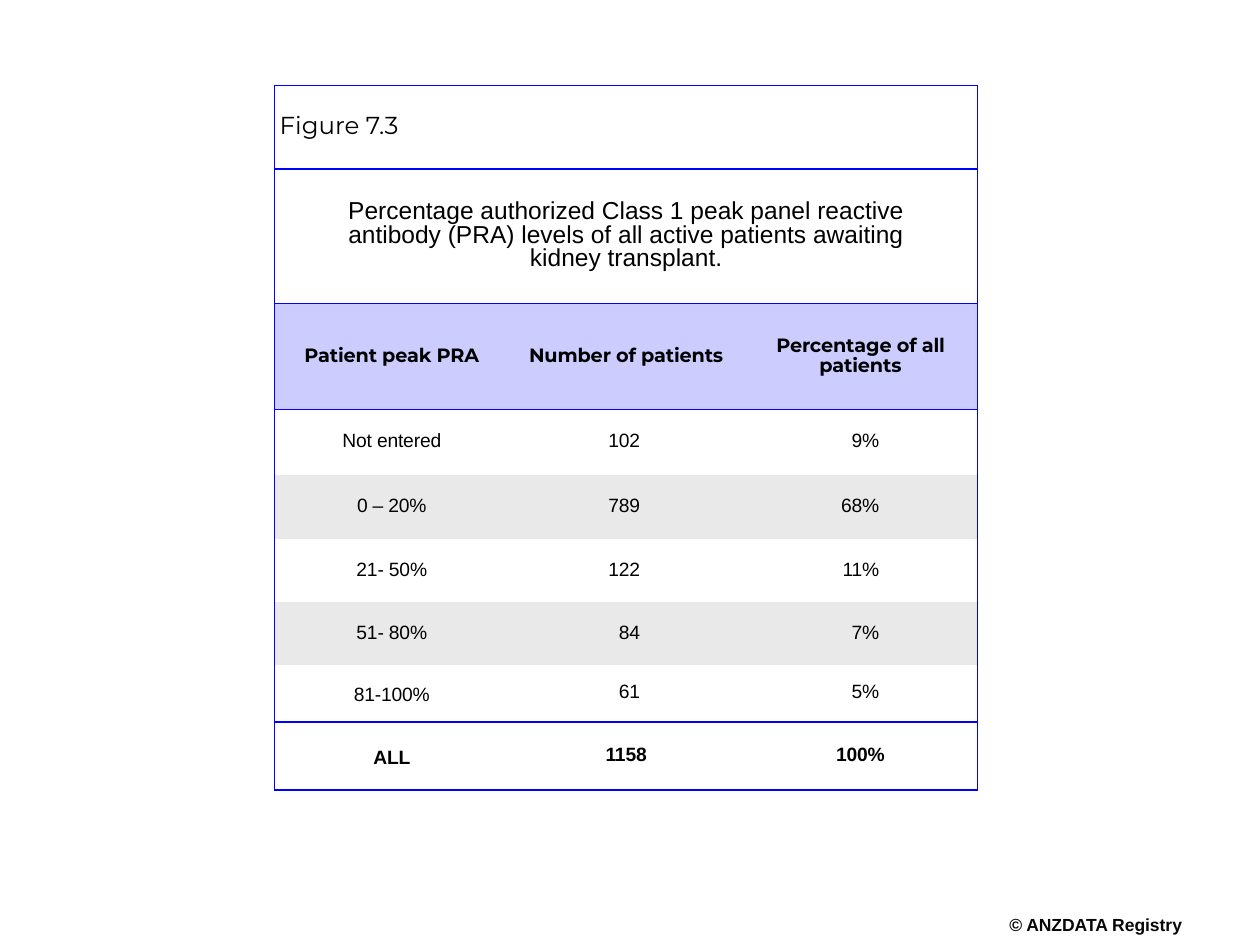
from lxml import etree
from pptx import Presentation, util as u
from pptx.dml.color import RGBColor
from pptx.enum import text as t
from pptx.oxml.ns import qn

THEME = dict(
    ink="000000", mark="080808", line="0000FF", head="CCCCFF", band="E9E9E9", page="FFFFFF",
    title=14, body=11, note=10, sans="Arial", show="Montserrat",
)
NOTE = "© ANZDATA Registry"
TITLES = [
    "Figure 7.3",
    "Percentage authorized Class 1 peak panel reactive antibody (PRA) "
    "levels of all active patients awaiting kidney transplant.",
]
HEAD = ["Patient peak PRA", "Number of patients", "Percentage of all patients"]
BODY = [
    ["Not entered", "102", "9%"],
    ["0 – 20%", "789", "68%"],
    ["21- 50%", "122", "11%"],
    ["51- 80%", "84", "7%"],
    ["81-100%", "61", "5%"],
]
TOTAL = ["ALL", "1158", "100%"]

LEFT, TOP, COL = 2.18, 0.68, 1.86
ROWS = [0.66, 1.07, 0.84, 0.52, 0.51, 0.5, 0.5, 0.45, 0.54]
GRID = [[line, "", ""] for line in TITLES] + [HEAD] + BODY + [TOTAL]
LAST = len(GRID) - 1
HEADROW = len(TITLES)
RULED = {-1, 0, 1, HEADROW, LAST - 1, LAST}  # rows with a line below; -1 is the top edge
PAD = 0.04
INSET = {1: 0.82, 2: 0.78}  # right margins that line up the digits


def rgb(name):
    return RGBColor.from_string(THEME[name])


def style(par, size, face="sans", bold=False, ink="ink", lead=0.85):
    par.line_spacing = lead
    for run in par.runs:
        font = run.font
        font.size, font.name, font.bold = u.Pt(THEME[size]), THEME[face], bold
        font.color.rgb = rgb(ink)


def edge(cell, side, width):
    """Draw one cell border; a width of 0 hides it."""
    line = etree.SubElement(cell._tc.get_or_add_tcPr(), qn("a:ln" + side), w=str(u.Pt(width)))
    if width:
        fill = etree.SubElement(line, qn("a:solidFill"))
        etree.SubElement(fill, qn("a:srgbClr"), val=THEME["line"])
    else:
        etree.SubElement(line, qn("a:noFill"))


def frame(cell, row, col):
    wide = row < HEADROW
    right = 0.5 if row == HEADROW else 1
    edge(cell, "L", int(wide or col == 0))
    edge(cell, "R", right if wide or col == 2 else 0)
    edge(cell, "T", int(row - 1 in RULED))
    edge(cell, "B", int(row in RULED))


def paint(cell, row):
    if row <= HEADROW:
        name = "head" if row == HEADROW else "page"
    else:
        name = "band" if row < LAST and (row - HEADROW) % 2 == 0 else None
    if name:
        cell.fill.solid()
        cell.fill.fore_color.rgb = rgb(name)
    else:
        cell.fill.background()


def write(cell, row, col, words):
    side, tall = (0.39, 0.02) if row == 1 else (PAD, PAD)
    cell.margin_left = cell.margin_right = u.Inches(side)
    cell.margin_top = cell.margin_bottom = u.Inches(tall)
    cell.vertical_anchor = t.MSO_ANCHOR.MIDDLE
    cell.text_frame.text = words
    par = cell.text_frame.paragraphs[0]
    par.alignment = t.PP_ALIGN.LEFT if row == 0 else t.PP_ALIGN.CENTER
    if HEADROW < row < LAST and col:
        par.alignment = t.PP_ALIGN.RIGHT
        cell.margin_right = u.Inches(INSET[col])
    style(
        par,
        "title" if row < HEADROW else "body",
        face="show" if row in (0, HEADROW) else "sans",
        bold=row in (HEADROW, LAST),
        lead=1.14 if row >= LAST - 1 and col == 0 else 0.85,
    )
    if row >= HEADROW:
        for run in par.runs:
            run._r.get_or_add_rPr().set("spc", "-10")


def build():
    deck = Presentation()
    deck.slide_width, deck.slide_height = u.Inches(10), u.Inches(7.5)
    slide = deck.slides.add_slide(deck.slide_layouts[6])

    box = slide.shapes.add_textbox(*map(u.Inches, (7.99, 7.28, 1.41, 0.17)))
    tf = box.text_frame
    tf.margin_left = tf.margin_right = tf.margin_top = tf.margin_bottom = 0
    tf.word_wrap = False
    tf.text = NOTE
    tf.paragraphs[0].alignment = t.PP_ALIGN.CENTER
    style(tf.paragraphs[0], "note", bold=True, ink="mark")

    size = (LEFT, TOP, 3 * COL, sum(ROWS))
    table = slide.shapes.add_table(len(GRID), 3, *map(u.Inches, size)).table
    table.first_row = table.horz_banding = False
    for col in table.columns:
        col.width = u.Inches(COL)
    for row, high in zip(table.rows, ROWS):
        row.height = u.Inches(high)
    for r in range(HEADROW):
        table.cell(r, 0).merge(table.cell(r, 2))
    for r, line in enumerate(GRID):
        for c, words in enumerate(line):
            cell = table.cell(r, c)
            frame(cell, r, c)
            paint(cell, r)
            if not cell.is_spanned:
                write(cell, r, c, words)
    deck.save("out.pptx")


if __name__ == "__main__":
    build()
